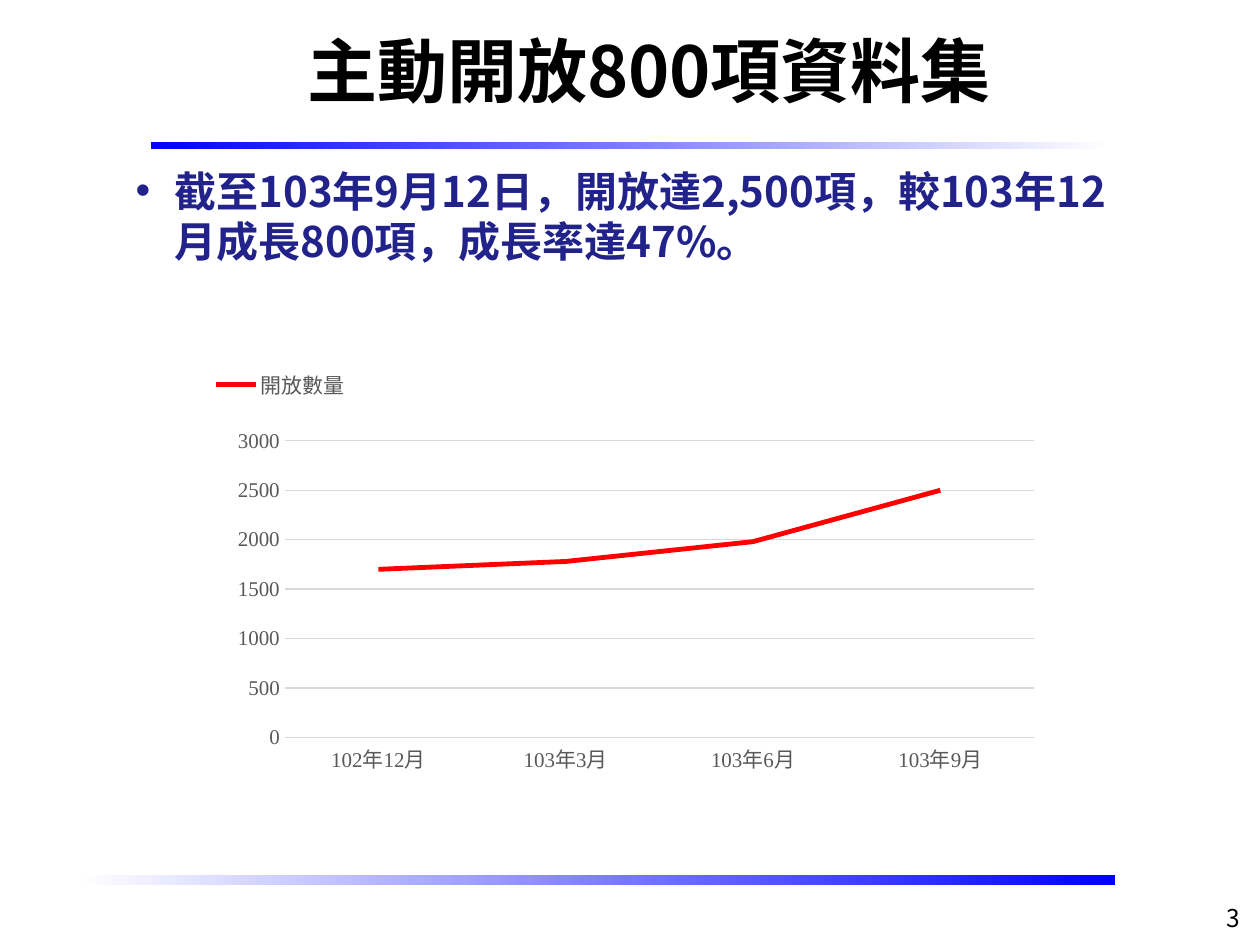
from lxml import etree
from pptx import Presentation
from pptx.chart.data import CategoryChartData
from pptx.dml.color import RGBColor
from pptx.enum.chart import XL_CHART_TYPE, XL_LEGEND_POSITION, XL_TICK_MARK
from pptx.enum.shapes import MSO_SHAPE
from pptx.enum.text import MSO_ANCHOR, MSO_AUTO_SIZE, PP_ALIGN
from pptx.oxml import parse_xml
from pptx.oxml.ns import qn
from pptx.util import Pt

LINE_CHART = XL_CHART_TYPE.LINE
LEGEND_BOTTOM = XL_LEGEND_POSITION.BOTTOM
NO_TICK = XL_TICK_MARK.NONE
RECTANGLE = MSO_SHAPE.RECTANGLE
MIDDLE, TOP = MSO_ANCHOR.MIDDLE, MSO_ANCHOR.TOP
FIXED = MSO_AUTO_SIZE.NONE
CENTER, LEFT, RIGHT = PP_ALIGN.CENTER, PP_ALIGN.LEFT, PP_ALIGN.RIGHT

# Content
TITLE = "主動開放800項資料集"
SUMMARY = "截至103年9月12日，開放達2,500項，較103年12月成長800項，成長率達47%。"
PAGE_NUMBER = "3"
SERIES_NAME = "開放數量"
DATASETS = {"102年12月": 1700, "103年3月": 1780, "103年6月": 1980, "103年9月": 2500}

THEME = {
    "text_font": "Noto Sans CJK SC", "chart_font": "Times New Roman",
    "black": "000000", "navy": "22228B", "blue": "0000FF", "white": "FFFFFF",
    "gray": "595959", "grid": "D9D9D9", "red": "FF0000",
    "title_size": 40, "summary_size": 24, "page_size": 14, "chart_size": 12,
}

# Places in px: left, top, width, height
EMU_PER_PX = 914400 // 126
SLIDE_SIZE = (1260, 945)
TITLE_BOX = (82, 16, 1134, 107)
SUMMARY_BOX = (123, 159, 1022, 115)
PAGE_BOX = (1147, 900, 106, 30)
CHART_BOX = (205, 368, 840, 412)
BARS = [((78, 875, 1037, 10), ("white", "blue")),
        ((151, 142, 960, 7), ("blue", "white"))]
BULLET_INDENT = 39
# Shares of the chart: left, top, width, height
PLOT_LAYOUT = (0.095, 0.177, 0.892, 0.72)
LEGEND_LAYOUT = (0, 0, 0.18, 0.08)

SHADOW = ('<a:effectLst xmlns:a="http://schemas.openxmlformats.org/drawingml/2006/main">'
          '<a:outerShdw blurRad="38100" dist="38100" dir="2700000" algn="tl">'
          '<a:srgbClr val="000000"><a:alpha val="43000"/></a:srgbClr>'
          '</a:outerShdw></a:effectLst>')


def px(n):
    return n * EMU_PER_PX


def place(box):
    return [px(n) for n in box]


def color(name):
    return RGBColor.from_string(THEME[name])


def style_font(font, face, size, ink):
    font.name = THEME[face]
    font.size = Pt(THEME[size])
    font.color.rgb = color(ink)


def write(shape, text, size, ink, align, anchor=TOP, bold=False):
    frame = shape.text_frame
    frame.word_wrap = True
    frame.auto_size = FIXED
    frame.vertical_anchor = anchor
    paragraph = frame.paragraphs[0]
    paragraph.alignment = align
    paragraph.space_before = Pt(0)
    run = paragraph.add_run()
    run.text = text
    run.font.bold = bold
    style_font(run.font, "text_font", size, ink)
    latin = run.font._element.find(qn("a:latin"))
    east_asian = etree.Element(qn("a:ea"), typeface=THEME["text_font"])
    latin.addnext(east_asian)
    return paragraph, run


def move(shape, box):
    shape.left, shape.top, shape.width, shape.height = place(box)


def set_layout(part, shares, inner=False):
    """Give a chart part a manual position."""
    for old in part.findall(qn("c:layout")):
        part.remove(old)
    layout = etree.Element(qn("c:layout"))
    manual = etree.SubElement(layout, qn("c:manualLayout"))
    entries = [("layoutTarget", "inner")] if inner else []
    entries += [("xMode", "edge"), ("yMode", "edge")]
    entries += zip("xywh", shares)
    for tag, value in entries:
        etree.SubElement(manual, qn(f"c:{tag}"), val=str(value))
    if inner:
        part.insert(0, layout)
    else:
        part.find(qn("c:legendPos")).addnext(layout)


prs = Presentation()
prs.slide_width, prs.slide_height = place(SLIDE_SIZE)
slide = prs.slides.add_slide(prs.slide_layouts[1])
title, summary = slide.placeholders

# Gradient bars
for box, stops in BARS:
    bar = slide.shapes.add_shape(RECTANGLE, *place(box))
    bar.shadow.inherit = False
    bar.line.fill.background()
    bar.fill.gradient()
    bar.fill.gradient_angle = 0
    for stop, name in zip(bar.fill.gradient_stops, stops):
        stop.color.rgb = color(name)

# Title
move(title, TITLE_BOX)
write(title, TITLE, "title_size", "black", CENTER, MIDDLE, bold=True)

# Summary bullet with a text shadow
move(summary, SUMMARY_BOX)
bullet, sentence = write(summary, SUMMARY, "summary_size", "navy", LEFT, bold=True)
bullet_props = bullet._p.get_or_add_pPr()
bullet_props.set("marL", str(px(BULLET_INDENT)))
bullet_props.set("indent", str(-px(BULLET_INDENT)))
etree.SubElement(bullet_props, qn("a:buChar"), char="•")
sentence.font._element.find(qn("a:solidFill")).addnext(parse_xml(SHADOW))

# Page number
page = slide.shapes.add_textbox(*place(PAGE_BOX))
number, _ = write(page, PAGE_NUMBER, "page_size", "black", RIGHT)
number.line_spacing = 0.9

# Line chart
data = CategoryChartData()
data.categories = list(DATASETS)
data.add_series(SERIES_NAME, list(DATASETS.values()))
chart = slide.shapes.add_chart(LINE_CHART, *place(CHART_BOX), data).chart
style_font(chart.font, "chart_font", "chart_size", "gray")
chart.has_title = False
chart.plots[0].vary_by_categories = False
set_layout(chart._chartSpace.chart.plotArea, PLOT_LAYOUT, inner=True)

growth = chart.plots[0].series[0]
growth.smooth = False
growth.format.line.color.rgb = color("red")
growth.format.line.width = Pt(2.75)

months, counts = chart.category_axis, chart.value_axis
for axis in (months, counts):
    axis.major_tick_mark = axis.minor_tick_mark = NO_TICK
    style_font(axis.tick_labels.font, "chart_font", "chart_size", "gray")
counts.minimum_scale, counts.maximum_scale, counts.major_unit = 0, 3000, 500
counts.format.line.fill.background()
for line, width in ((months.format.line, 1), (counts.major_gridlines.format.line, 0.75)):
    line.color.rgb = color("grid")
    line.width = Pt(width)

chart.has_legend = True
chart.legend.position = LEGEND_BOTTOM
chart.legend.include_in_layout = False
style_font(chart.legend.font, "chart_font", "chart_size", "gray")
set_layout(chart.legend._element, LEGEND_LAYOUT)

prs.save("out.pptx")
